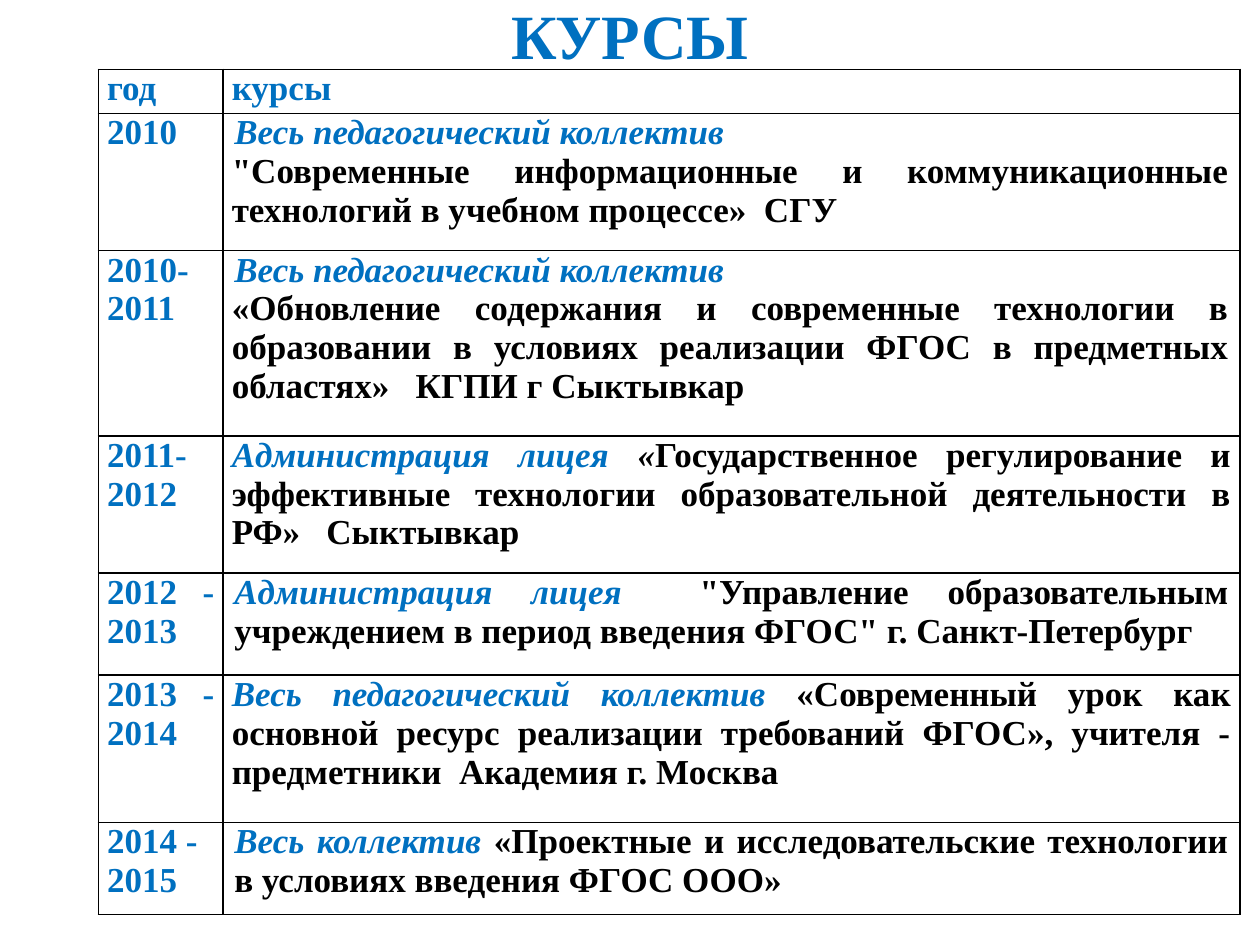
from lxml.etree import SubElement
from pptx import Presentation
from pptx.dml.color import RGBColor
from pptx.enum.text import MSO_ANCHOR, PP_ALIGN
from pptx.oxml.ns import qn
from pptx.util import Inches, Pt

COLORS = {"blue": "0070C0", "black": "000000", "white": "FFFFFF"}
FONT = "Times New Roman"
COLUMN_WIDTHS = [0.99, 8.07]
ROW_HEIGHTS = [0.35, 1.09, 1.47, 1.09, 0.81, 1.17, 0.73]
LEFT, JUSTIFY = PP_ALIGN.LEFT, PP_ALIGN.JUSTIFY

# Span styles: colour name, italic
HEADING = ("blue", False)
AUDIENCE = ("blue", True)
QUOTE = ("black", True)
COURSE = ("black", False)

STAFF = "Весь педагогический коллектив"
# Year, its alignment, whether the course is inset,
# and the paragraphs of the course as lists of spans
COURSES = [
    ("год", JUSTIFY, False, [[("курсы", HEADING)]]),
    ("2010", LEFT, True, [
        [(STAFF, AUDIENCE)],
        [('"Современные информационные и коммуникационные технологий '
          'в учебном процессе»  СГУ', COURSE)]]),
    ("2010-2011", LEFT, True, [
        [(STAFF, AUDIENCE)],
        [("«Обновление содержания и современные технологии в образовании "
          "в условиях реализации ФГОС в предметных областях»   "
          "КГПИ г Сыктывкар", COURSE)]]),
    ("2011-2012", LEFT, False, [
        [("Администрация лицея ", AUDIENCE), ("«", QUOTE),
         ("Государственное регулирование и эффективные технологии "
          "образовательной деятельности в РФ»   Сыктывкар", COURSE)]]),
    ("2012 - 2013", JUSTIFY, True, [
        [("Администрация лицея  ", AUDIENCE),
         ('"Управление образовательным учреждением в период введения ФГОС" '
          'г. Санкт-Петербург', COURSE)]]),
    ("2013 - 2014", JUSTIFY, False, [
        [(STAFF + " ", AUDIENCE),
         ("«Современный урок как основной ресурс реализации требований ФГОС», "
          "учителя - предметники  Академия г. Москва", COURSE)]]),
    ("2014 - 2015", LEFT, True, [
        [("Весь коллектив ", AUDIENCE),
         ("«Проектные и исследовательские технологии в условиях введения "
          "ФГОС ООО»", COURSE)]]),
]


def set_all(target, **values):
    for name, value in values.items():
        setattr(target, name, value)


def add_span(para, text, size, style):
    color, italic = style
    span = para.add_run()
    span.text = text
    set_all(span.font, name=FONT, size=Pt(size), bold=True, italic=italic)
    span.font.color.rgb = RGBColor.from_string(COLORS[color])


def add_title(page, left, top, width, height):
    title = page.shapes.title
    set_all(title, left=left, top=top, width=width, height=height)
    set_all(title.text_frame, vertical_anchor=MSO_ANCHOR.MIDDLE, word_wrap=True,
            margin_top=0, margin_bottom=0)
    para = title.text_frame.paragraphs[0]
    para.alignment = PP_ALIGN.CENTER
    add_span(para, "КУРСЫ", 36, HEADING)


def format_cell(cell):
    set_all(cell, margin_left=Inches(0.07), margin_right=Inches(0.07),
            margin_top=0, margin_bottom=0, vertical_anchor=MSO_ANCHOR.TOP)
    properties = cell._tc.get_or_add_tcPr()
    for side in ("a:lnL", "a:lnR", "a:lnT", "a:lnB"):
        line = SubElement(properties, qn(side), w=str(Pt(1)))
        fill = SubElement(line, qn("a:solidFill"))
        SubElement(fill, qn("a:srgbClr"), val=COLORS["black"])
    cell.fill.solid()
    cell.fill.fore_color.rgb = RGBColor.from_string(COLORS["white"])


def fill_cell(cell, paragraphs, alignment, inset=False):
    format_cell(cell)
    frame = cell.text_frame
    for index, spans in enumerate(paragraphs):
        para = frame.add_paragraph() if index else frame.paragraphs[0]
        para.alignment = alignment
        if inset:
            margin = str(Inches(0.02))
            properties = para._p.get_or_add_pPr()
            properties.set("marR", margin)
            # Only the opening paragraph is inset on the left
            if index == 0:
                properties.set("marL", margin)
        for text, style in spans:
            add_span(para, text, 20, style)


def add_courses(page, left, top, width, height):
    table = page.shapes.add_table(len(COURSES), 2, left, top, width, height).table
    set_all(table, first_row=False, horz_banding=False)
    for column, size in zip(table.columns, COLUMN_WIDTHS):
        column.width = Inches(size)
    for row, size, course in zip(table.rows, ROW_HEIGHTS, COURSES):
        row.height = Inches(size)
        year, alignment, inset, paragraphs = course
        fill_cell(row.cells[0], [[(year, HEADING)]], alignment)
        fill_cell(row.cells[1], paragraphs, JUSTIFY, inset)


def main():
    deck = Presentation()
    set_all(deck, slide_width=Inches(10), slide_height=Inches(7.5))
    page = deck.slides.add_slide(deck.slide_layouts[5])
    add_title(page, Inches(0.5), Inches(0), Inches(9), Inches(0.55))
    add_courses(page, Inches(0.78), Inches(0.55),
                Inches(sum(COLUMN_WIDTHS)), Inches(sum(ROW_HEIGHTS)))
    deck.save("out.pptx")


if __name__ == "__main__":
    main()
